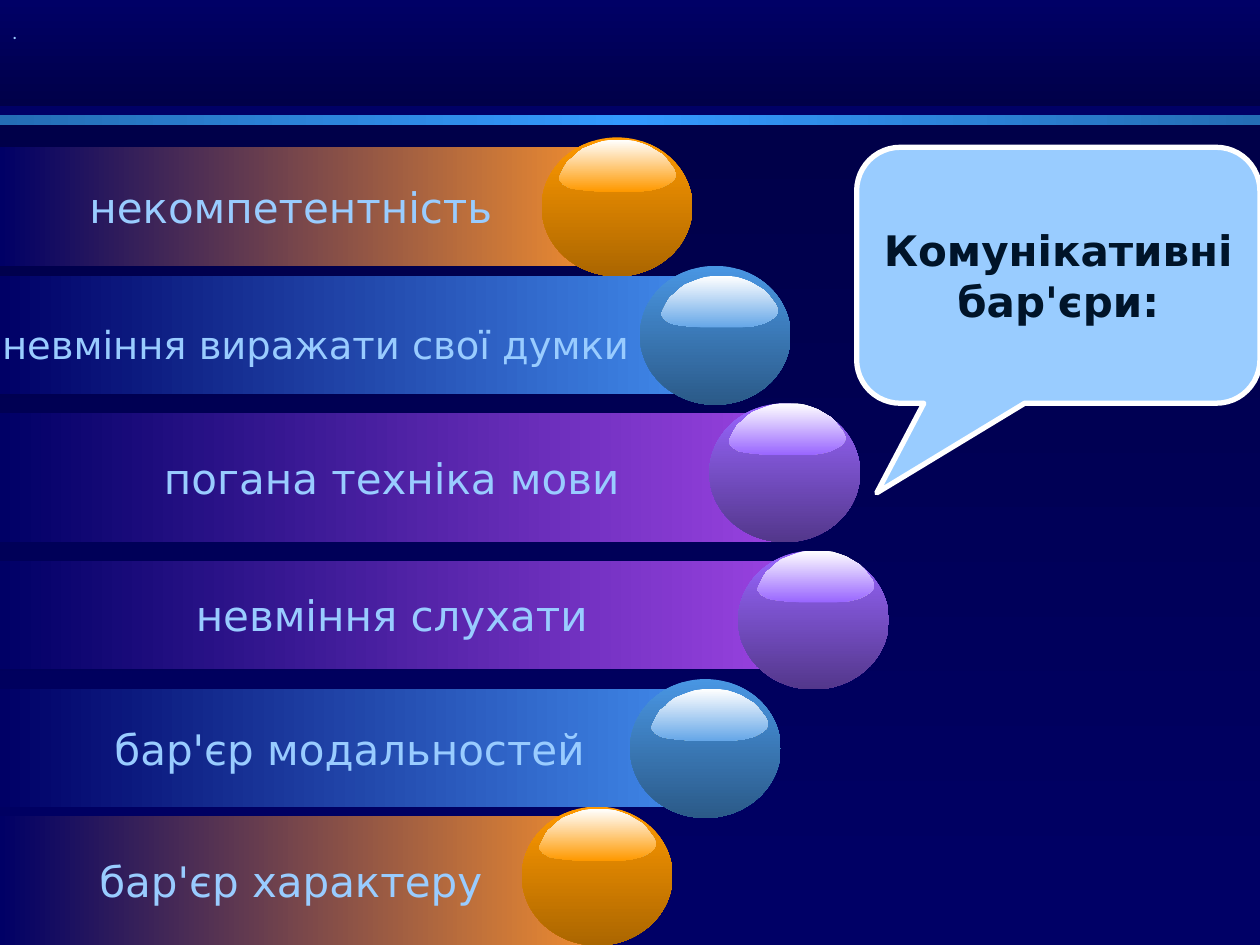
"""Build the slide of communication barriers as bars that end in glossy balls."""
import dataclasses
import typing

import lxml.etree
import pptx
import pptx.dml.color
import pptx.enum.shapes
import pptx.enum.text
import pptx.oxml.ns
import pptx.util

Cm = pptx.util.Cm
Kind = pptx.enum.shapes.MSO_SHAPE
Align = pptx.enum.text.PP_ALIGN
Anchor = pptx.enum.text.MSO_ANCHOR
qn = pptx.oxml.ns.qn


class Stop(typing.NamedTuple):
    pos: int
    color: str
    shade: int = 100


@dataclasses.dataclass(frozen=True)
class Theme:
    navy: str = "000066"
    stripe: str = "3399FF"
    pale: str = "99CCFF"
    ink: str = "001429"
    white: str = "FFFFFF"
    font: str = "DejaVu Sans"
    small_font: str = "Calibri"
    large: int = 24
    medium: int = 22
    tiny: int = 11


@dataclasses.dataclass(frozen=True)
class Style:
    width: float
    bar: str
    ball: str
    shade: int
    shine: str
    dx: float
    dy: float


@dataclasses.dataclass(frozen=True)
class Row:
    text: str
    style: Style
    top: float
    height: float
    ball: float


THEME = Theme()
ORANGE = Style(11.73, "E98931", "FF9900", 40, "FF9900", 0.35, 0.05)
BLUE = Style(14.1, "418AEB", "4996E3", 31, "66A7E8", 0.43, 0.2)
PURPLE = Style(15.8, "9942E0", "9966FF", 25, "9966FF", 0.39, 0)
WIDE = "невміння виражати свої думки"
ROWS = (
    Row("некомпетентність", ORANGE, 2.97, 2.39, 10.92),
    Row("", BLUE, 5.56, 2.39, 12.9),
    Row("погана техніка мови", PURPLE, 8.33, 2.59, 14.3),
    Row("невміння слухати", PURPLE, 11.3, 2.18, 14.88),
    Row("бар'єр модальностей", BLUE, 13.89, 2.39, 12.7),
    Row("бар'єр характеру", ORANGE, 16.46, 2.59, 10.52),
)
SHINE = (
    (91, 23), (93, 28), (92, 30), (91, 32), (87, 35), (81, 38), (73, 40),
    (63, 41), (56, 41), (33, 41), (21, 40), (13, 39), (8, 38), (3, 35),
    (0, 31), (1, 28), (4, 22), (7, 17), (11, 14), (15, 10), (19, 7),
    (24, 5), (29, 3), (35, 1), (41, 0), (47, 0), (54, 0), (60, 1),
    (66, 3), (71, 5), (76, 8), (81, 11), (85, 15), (88, 19),
)


def rgb(code: str) -> pptx.dml.color.RGBColor:
    """Turn a hex code into a colour."""
    return pptx.dml.color.RGBColor.from_string(code)


def blend(shape, stops: typing.Sequence[Stop], angle: int) -> None:
    """Fill a shape with a linear gradient and drop its line and shadow."""
    shape.shadow.inherit = False
    shape.line.fill.background()
    shape.fill.gradient()
    grad = shape._element.spPr.find(qn("a:gradFill"))
    for child in list(grad):
        grad.remove(child)
    group = lxml.etree.SubElement(grad, qn("a:gsLst"))
    for stop in stops:
        node = lxml.etree.SubElement(group, qn("a:gs"), pos=str(stop.pos * 1000))
        color = lxml.etree.SubElement(node, qn("a:srgbClr"), val=stop.color)
        if stop.shade < 100:
            lxml.etree.SubElement(color, qn("a:shade"), val=str(stop.shade * 1000))
    lxml.etree.SubElement(grad, qn("a:lin"), ang=str(angle * 60000), scaled="1")


def block(slide, kind, box: tuple, stops: typing.Sequence[Stop], angle: int):
    """Add a preset shape with a gradient."""
    shape = slide.shapes.add_shape(kind, *map(Cm, box))
    blend(shape, stops, angle)
    return shape


def write(shape, text: str, size: int, color: str = THEME.pale,
          font: str = THEME.font, bold: bool = False, wrap: bool = False,
          align=Align.CENTER, anchor=Anchor.MIDDLE) -> None:
    """Put one formatted run into a shape."""
    frame = shape.text_frame
    frame.word_wrap = wrap
    frame.vertical_anchor = anchor
    para = frame.paragraphs[0]
    para.alignment = align
    run = para.add_run()
    run.text = text
    run.font.name = font
    run.font.size = pptx.util.Pt(size)
    run.font.bold = bold
    run.font.color.rgb = rgb(color)


def draw_back(slide) -> None:
    """Draw the backdrop bands."""
    fill = slide.background.fill
    fill.solid()
    fill.fore_color.rgb = rgb(THEME.navy)
    light, dark = THEME.navy, 47
    block(slide, Kind.RECTANGLE, (0, 0, 25.4, 2.13),
          (Stop(0, light), Stop(100, light, dark)), 90)
    block(slide, Kind.RECTANGLE, (0, 2.51, 25.4, 16.54),
          (Stop(0, light, dark), Stop(100, light)), 90)
    block(slide, Kind.RECTANGLE, (0, 2.32, 25.4, 0.21),
          (Stop(0, THEME.stripe, 46), Stop(50, THEME.stripe),
           Stop(100, THEME.stripe, 46)), 0)


def draw_row(slide, row: Row) -> None:
    """Draw one bar with its ball and shine."""
    style = row.style
    bar = block(slide, Kind.RECTANGLE, (0, row.top, style.width, row.height),
                (Stop(0, THEME.navy), Stop(100, style.bar)), 0)
    if row.text:
        write(bar, row.text, THEME.large)
    top = row.top - 0.2
    block(slide, Kind.OVAL, (row.ball, top, 3.04, 2.8),
          (Stop(0, style.ball), Stop(100, style.ball, style.shade)), 90)
    pen = slide.shapes.build_freeform(*SHINE[0], scale=Cm(2.54) / 100)
    pen.add_line_segments(SHINE[1:], close=True)
    shine = pen.convert_to_shape(Cm(row.ball + style.dx), Cm(top + style.dy))
    blend(shine, (Stop(0, THEME.white), Stop(100, style.shine)), 90)


def draw_call(slide) -> None:
    """Draw the callout that names the topic."""
    call = slide.shapes.add_shape(Kind.ROUNDED_RECTANGULAR_CALLOUT,
                                  *map(Cm, (17.27, 2.97, 8.13, 5.16)))
    call.shadow.inherit = False
    for index, value in enumerate((-0.45, 0.85, 0.17)):
        call.adjustments[index] = value
    call.fill.solid()
    call.fill.fore_color.rgb = rgb(THEME.pale)
    call.line.color.rgb = rgb(THEME.white)
    call.line.width = pptx.util.Pt(3)
    write(call, "Комунікативні бар'єри:", THEME.large, THEME.ink,
          bold=True, wrap=True)


def main() -> None:
    """Build and save the deck."""
    deck = pptx.Presentation()
    deck.slide_width, deck.slide_height = Cm(25.4), Cm(19.05)
    slide = deck.slides.add_slide(deck.slide_layouts[6])
    draw_back(slide)
    for row in ROWS:
        draw_row(slide, row)
    label = slide.shapes.add_textbox(*map(Cm, (-1.78, 6.35, 16.28, 1.19)))
    write(label, WIDE, THEME.medium, wrap=True, anchor=Anchor.TOP)
    draw_call(slide)
    dot = slide.shapes.add_textbox(*map(Cm, (0, 0.28, 0.61, 0.74)))
    write(dot, ".", THEME.tiny, font=THEME.small_font, align=Align.LEFT)
    deck.save("out.pptx")


if __name__ == "__main__":
    main()
